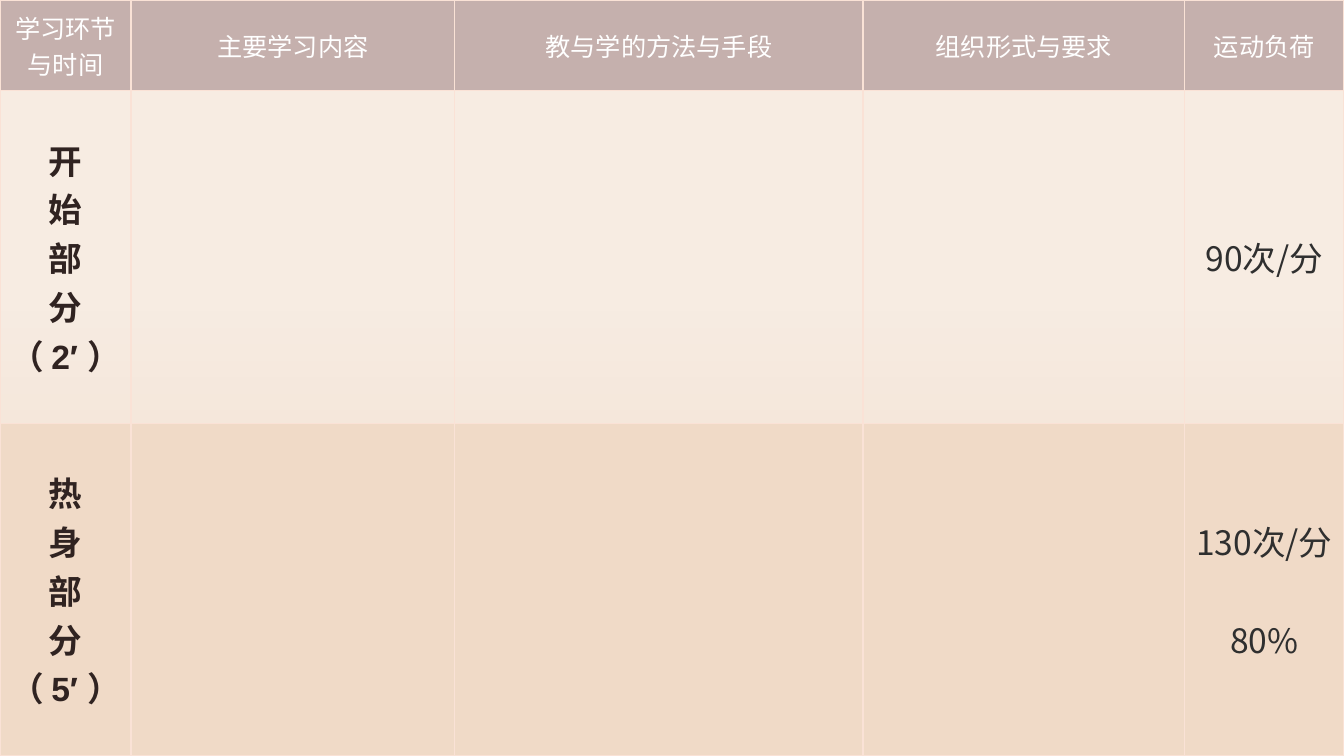
from dataclasses import dataclass

from lxml import etree
from pptx import Presentation
from pptx import util as u
from pptx.dml.color import RGBColor
from pptx.enum import text
from pptx.oxml import ns

WIDE, HIGH = 13.33, 7.5
COLS = [1.3, 3.21, 4.05, 3.19, 1.58]
ROWS = [0.9, 3.3, 3.3]
HEADS = ["学习环节与时间", "主要学习内容", "教与学的方法与手段", "组织形式与要求", "运动负荷"]
PARTS = [
    (["开", "始", "部", "分", "（ 2′ ）"], ["90次/分"]),
    (["热", "身", "部", "分", "（ 5′ ）"], ["130次/分", "80%"]),
]


@dataclass(frozen=True)
class Font:
    face: str
    size: int
    color: str
    bold: bool = False


@dataclass(frozen=True)
class Theme:
    asian: str = "Noto Sans CJK SC"
    head: Font = Font("Arial", 18, "FFFFFF")
    stage: Font = Font("Arial", 24, "302321", True)
    load: Font = Font("Noto Sans CJK SC", 24, "2F2F2F")
    bar: str = "C5B0AD"
    sand: str = "F0DAC7"
    white: str = "FFFFFF"
    rule: str = "FAE2D6"
    gap: int = 35


class Page:
    def __init__(self, slide, theme):
        self.slide, self.theme = slide, theme

    def back(self):
        fill = self.slide.background.fill
        fill.gradient()
        fill.gradient_angle = 90
        tones = [(0, self.theme.sand), (0.61, self.theme.white)]
        for stop, (place, tone) in zip(fill.gradient_stops, tones):
            stop.position = place
            stop.color.rgb = RGBColor.from_string(tone)

    def table(self, cols, rows):
        """Add a full-slide table whose tracks share the slide's size."""
        frame = self.slide.shapes.add_table(
            len(rows), len(cols), 0, 0, u.Inches(WIDE), u.Inches(HIGH))
        grid = frame.table
        for col, size in zip(grid.columns, cols):
            col.width = u.Inches(WIDE * size / sum(cols))
        for row, size in zip(grid.rows, rows):
            row.height = u.Inches(HIGH * size / sum(rows))
        return grid

    def paint(self, cell, color, alpha=100):
        cell.fill.solid()
        cell.fill.fore_color.rgb = RGBColor.from_string(color)
        props = cell._tc.get_or_add_tcPr()
        if alpha < 100:
            tone = props.find(".//" + ns.qn("a:srgbClr"))
            etree.SubElement(tone, ns.qn("a:alpha"), val=str(alpha * 1000))
        for spot, side in enumerate("LRTB"):
            line = etree.Element(ns.qn(f"a:ln{side}"), w=str(u.Pt(1)))
            fill = etree.SubElement(line, ns.qn("a:solidFill"))
            etree.SubElement(fill, ns.qn("a:srgbClr"), val=self.theme.rule)
            props.insert(spot, line)

    def label(self, cell, lines, font, gap=0):
        """Set centred paragraphs, with gap points between them."""
        cell.vertical_anchor = text.MSO_ANCHOR.MIDDLE
        frame = cell.text_frame
        for spot, words in enumerate(lines):
            para = frame.add_paragraph() if spot else frame.paragraphs[0]
            para.alignment = text.PP_ALIGN.CENTER
            if spot and gap:
                para.space_before = u.Pt(gap)
            run = para.add_run()
            run.text = words
            run.font.name, run.font.size = font.face, u.Pt(font.size)
            run.font.bold = font.bold
            run.font.color.rgb = RGBColor.from_string(font.color)
            etree.SubElement(run.font._element, ns.qn("a:ea"), typeface=self.theme.asian)


def main():
    deck = Presentation()
    deck.slide_width, deck.slide_height = u.Inches(WIDE), u.Inches(HIGH)
    theme = Theme()
    page = Page(deck.slides.add_slide(deck.slide_layouts[6]), theme)
    page.back()
    plan = page.table(COLS, ROWS)
    looks = [(theme.bar, 100), (theme.sand, 50), (theme.sand, 100)]
    for row, look in zip(plan.rows, looks):
        for cell in row.cells:
            page.paint(cell, *look)
    for col, head in enumerate(HEADS):
        page.label(plan.cell(0, col), [head], theme.head)
    for row, (stage, load) in enumerate(PARTS, 1):
        page.label(plan.cell(row, 0), stage, theme.stage)
        page.label(plan.cell(row, len(COLS) - 1), load, theme.load, theme.gap)
    deck.save("out.pptx")


if __name__ == "__main__":
    main()
